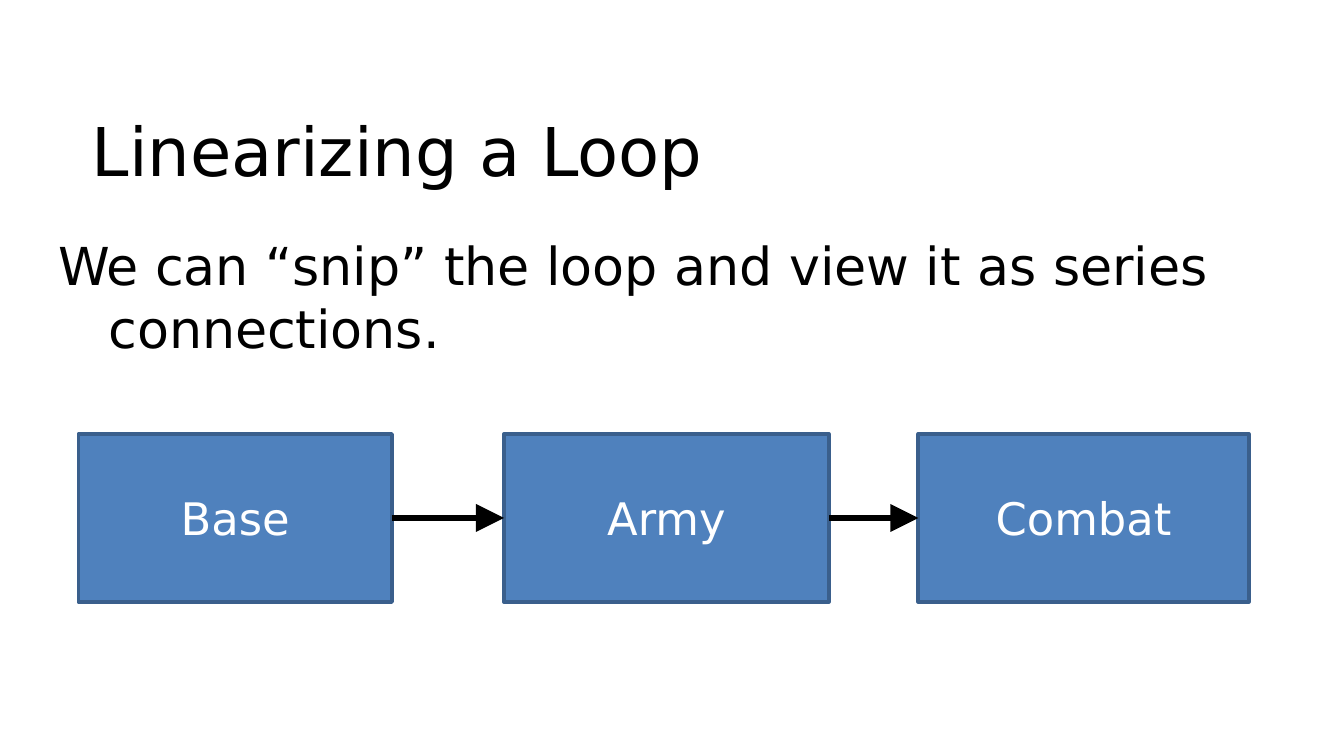
from lxml import etree
from pptx import Presentation
from pptx.dml.color import RGBColor
from pptx.enum.shapes import MSO_CONNECTOR as Connector, MSO_SHAPE as Shape
from pptx.enum.text import MSO_ANCHOR as Anchor, PP_ALIGN as Align
from pptx.oxml.ns import qn
from pptx.util import Pt

FONT = "DejaVu Sans"
BLACK, WHITE = "000000", "FFFFFF"
BOX_FILL, BOX_LINE = "4F81BD", "3A5F8C"
BOX_TOP, BOX_HEIGHT = 232.5, 90
STAGES = [("Base", 42, 168), ("Army", 270, 174), ("Combat", 492, 177)]


def color(value):
    return RGBColor.from_string(value)


def write(shape, text, size, fill=BLACK, align=Align.LEFT, anchor=Anchor.TOP, hanging=0):
    frame = shape.text_frame
    frame.word_wrap = True
    frame.vertical_anchor = anchor
    paragraph = frame.paragraphs[0]
    paragraph.alignment = align
    if hanging:
        properties = paragraph._p.get_or_add_pPr()
        properties.set("marL", str(Pt(hanging)))
        properties.set("indent", str(-Pt(hanging)))
    run = paragraph.add_run()
    run.text = text
    run.font.name = FONT
    run.font.size = Pt(size)
    run.font.color.rgb = color(fill)


def add_text(slide, text, left, top, width, height, **text_format):
    shape = slide.shapes.add_textbox(Pt(left), Pt(top), Pt(width), Pt(height))
    shape.text_frame.margin_top = Pt(6)
    write(shape, text, **text_format)


def add_box(slide, text, left, width):
    shape = slide.shapes.add_shape(
        Shape.RECTANGLE, Pt(left), Pt(BOX_TOP), Pt(width), Pt(BOX_HEIGHT))
    shape.shadow.inherit = False
    shape.fill.solid()
    shape.fill.fore_color.rgb = color(BOX_FILL)
    shape.line.color.rgb = color(BOX_LINE)
    shape.line.width = Pt(2)
    write(shape, text, size=24, fill=WHITE, align=Align.CENTER, anchor=Anchor.MIDDLE)
    return shape


def add_arrow(slide, source, target):
    arrow = slide.shapes.add_connector(Connector.STRAIGHT, 0, 0, 0, 0)
    arrow.begin_connect(source, 3)
    arrow.end_connect(target, 1)
    arrow.line.color.rgb = color(BLACK)
    arrow.line.width = Pt(3)
    # Large arrowhead at the target, no shadow
    line = arrow.line._get_or_add_ln()
    etree.SubElement(line, qn("a:tailEnd"), type="triangle", w="lg", len="lg")
    etree.SubElement(arrow._element.spPr, qn("a:effectLst"))


def main():
    presentation = Presentation()
    presentation.slide_width = Pt(720)
    presentation.slide_height = Pt(405)
    slide = presentation.slides.add_slide(presentation.slide_layouts[6])

    # Title and body
    add_text(slide, "Linearizing a Loop", 42, 52.5, 636, 61, size=36)
    add_text(slide, "We can “snip” the loop and view it as series connections.",
             24, 119, 660, 78, size=28, hanging=27)

    # Chain of stages
    boxes = [add_box(slide, *stage) for stage in STAGES]
    for source, target in zip(boxes, boxes[1:]):
        add_arrow(slide, source, target)

    presentation.save("out.pptx")


if __name__ == "__main__":
    main()
